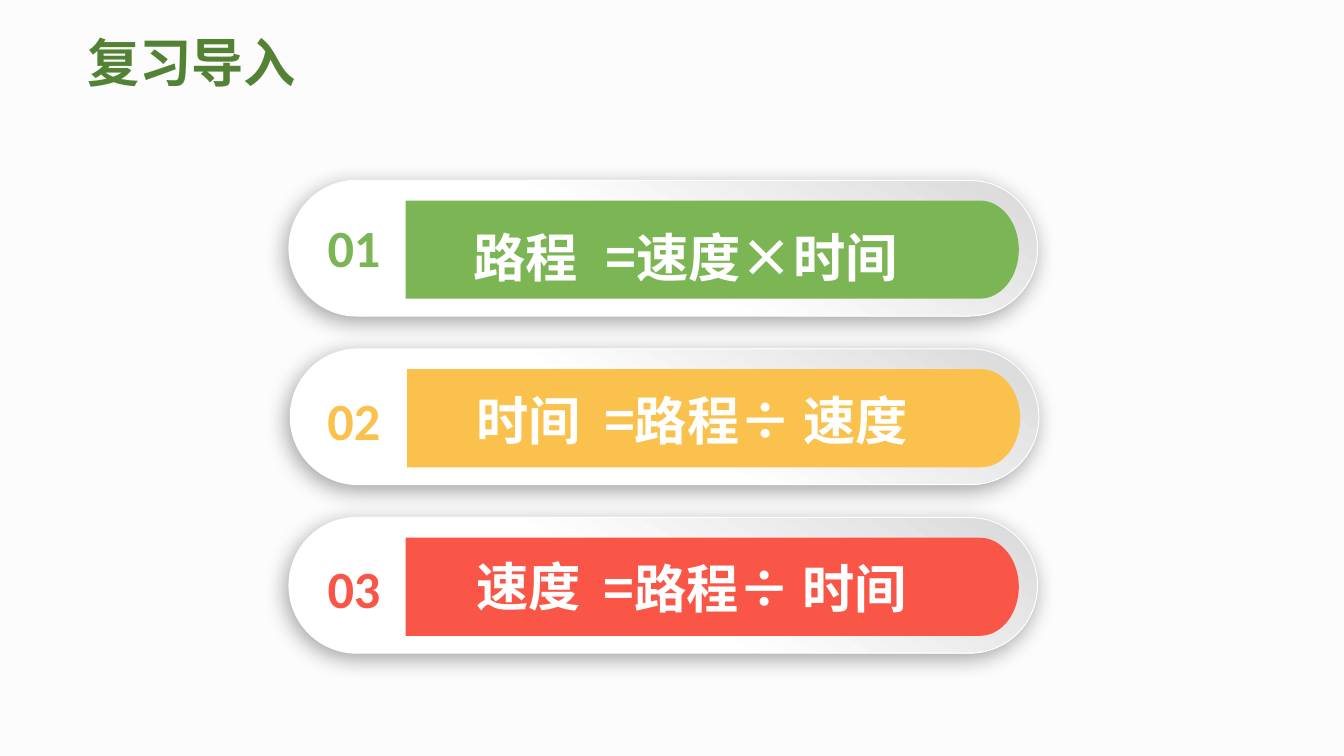
from math import cos, pi, sin

from lxml.etree import SubElement
from pptx import Presentation
from pptx.dml.color import RGBColor
from pptx.enum.shapes import MSO_SHAPE
from pptx.enum.text import MSO_ANCHOR, MSO_AUTO_SIZE, PP_ALIGN
from pptx.oxml.ns import qn
from pptx.util import Inches, Pt

WIDE = 10
HIGH = WIDE * 9 / 16
CJK = "Noto Sans CJK SC"
# left of the row in percent of the page, number, colour, term, formula,
# then left and top of the three texts in percent of the row
ROWS = [
    (21.5, "01", "7CB554", "路程", "=速度×时间", ((3.4, 21), (21, 33), (30, 28))),
    (21.6, "02", "FAC14D", "时间", "=路程÷ 速度", ((3.2, 24), (21.2, 29), (30.4, 24))),
    (21.5, "03", "F95647", "速度", "=路程÷ 时间", ((3.4, 24), (21.4, 27), (30.5, 24))),
]


def rgb(code):
    return RGBColor.from_string(code)


def part(box, x, y, w, h):
    """Return the box that covers the given percentages of another box."""
    left, top, wide, high = box
    return (left + x * wide / 100, top + y * high / 100,
            w * wide / 100, h * high / 100)


def inch(box):
    return [Inches(v) for v in box]


def write(shape, text, color, font=CJK, align=PP_ALIGN.LEFT, wrap=True, inset=True):
    frame = shape.text_frame
    frame.word_wrap = wrap
    frame.auto_size = MSO_AUTO_SIZE.SHAPE_TO_FIT_TEXT
    frame.vertical_anchor = MSO_ANCHOR.TOP
    if not inset:
        frame.margin_left = frame.margin_right = 0
        frame.margin_top = frame.margin_bottom = 0
    para = frame.paragraphs[0]
    para.alignment = align
    run = para.add_run()
    run.text = text
    run.font.size, run.font.bold, run.font.name = Pt(28), True, font
    run.font.color.rgb = rgb(color)
    SubElement(run.font._element, qn("a:ea"), typeface=font)


def shade(shape):
    """Give the shape a soft shadow to the lower left."""
    shape.shadow.inherit = False
    effect = shape._element.spPr.find(qn("a:effectLst"))
    outer = SubElement(effect, qn("a:outerShdw"), blurRad=str(Pt(12)),
                       dist=str(Pt(3)), dir="8100000", algn="tr", rotWithShape="0")
    black = SubElement(outer, qn("a:srgbClr"), val="000000")
    SubElement(black, qn("a:alpha"), val="34000")


def pill(shapes, box):
    shape = shapes.add_shape(MSO_SHAPE.ROUNDED_RECTANGLE, *inch(box))
    shape.adjustments[0] = 0.5
    shape.fill.gradient()
    shape.fill.gradient_angle = 60
    stops = shape.fill.gradient_stops
    for stop, place, color in zip(stops, (0.45, 1), ("FFFFFF", "D9D9D9")):
        stop.position = place
        stop.color.rgb = rgb(color)
    shape.line.color.rgb = rgb("FFFFFF")
    shape.line.width = Pt(0.5)
    shade(shape)


def band(shapes, box, color):
    """Draw a bar with a square left end and an elliptic right end."""
    left, top, wide, high = box
    bend, half, steps = 0.29, high / 2, 32
    turns = [pi * (i / steps - 0.5) for i in range(steps + 1)]
    arc = [(left + wide - bend + bend * cos(t), top + half + half * sin(t))
           for t in turns]
    pen = shapes.build_freeform(Inches(left), Inches(top), scale=1)
    pen.add_line_segments([inch(dot) for dot in arc + [(left, top + high)]], close=True)
    shape = pen.convert_to_shape()
    shape.fill.solid()
    shape.fill.fore_color.rgb = rgb(color)
    shape.line.fill.background()
    shape.shadow.inherit = False


def row(slide, box, num, color, term, rule, spots):
    shapes = slide.shapes.add_group_shape().shapes
    pill(shapes, box)
    band(shapes, part(box, 15.6, 15, 81.9, 72.3), color)

    def label(spot, w, h):
        return shapes.add_textbox(*inch(part(box, *spot, w, h)))

    first, next_one, last = spots
    write(label(first, 10.8, 56.4), num, color, "Calibri", wrap=False)
    write(label(next_one, 21.2, 46.5), term, "FFFFFF",
          align=PP_ALIGN.CENTER, inset=False)
    write(label(last, 63.6, 56.4), rule, "FFFFFF", align=PP_ALIGN.CENTER)


def head(slide, box, text):
    title = slide.shapes.title
    title.left, title.top, title.width, title.height = inch(box)
    write(title, text, "548235")


def main():
    deck = Presentation()
    deck.slide_width, deck.slide_height = Inches(WIDE), Inches(HIGH)
    slide = deck.slides.add_slide(deck.slide_layouts[5])
    slide.background.fill.solid()
    slide.background.fill.fore_color.rgb = rgb("FCFCFC")
    page = (0, 0, WIDE, HIGH)
    head(slide, part(page, 5.5, 3.1, 18.6, 10.2), "复习导入")
    for i, (left, *data) in enumerate(ROWS):
        row(slide, part(page, left, 23.85 + i * 22.3, 55.7, 17.95), *data)
    deck.save("out.pptx")


if __name__ == "__main__":
    main()
